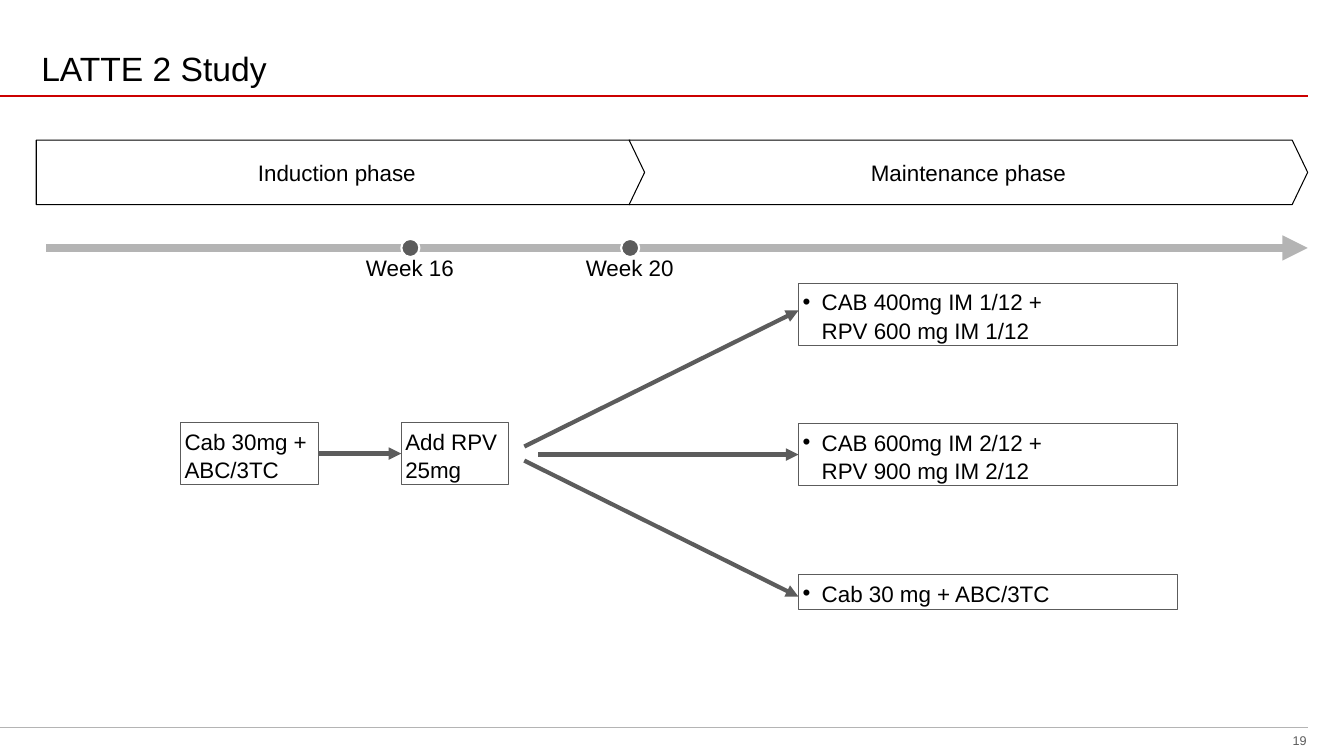
from lxml.etree import SubElement
from pptx import Presentation
from pptx.dml.color import RGBColor
from pptx.enum.shapes import MSO_CONNECTOR, MSO_SHAPE
from pptx.enum.text import MSO_ANCHOR, PP_ALIGN
from pptx.oxml.ns import qn
from pptx.util import Inches, Pt

BLACK, WHITE, RED = "000000", "FFFFFF", "CC0000"
DARK, LIGHT = "5C5C5C", "B4B4B4"


def paint(item, shade):
    item.solid()
    item.fore_color.rgb = RGBColor.from_string(shade)


def write(frame, words, size=16, shade=BLACK, align=PP_ALIGN.LEFT,
          anchor=MSO_ANCHOR.TOP, wrap=True, inset=0.04, base=0.04, bullet=False):
    frame.word_wrap = wrap
    frame.vertical_anchor = anchor
    frame.margin_left = frame.margin_right = frame.margin_top = Inches(inset)
    frame.margin_bottom = Inches(base)
    para = frame.paragraphs[0]
    para.text = words
    para.alignment = align
    para.line_spacing = 1.05
    for run in para.runs:
        run.font.name = "Arial"
        run.font.size = Pt(size)
        paint(run.font.fill, shade)
    for gap in para._p.findall(qn("a:br")):
        SubElement(gap, qn("a:rPr"), sz=str(size * 100))
    if bullet:
        props = para._p.get_or_add_pPr()
        props.set("marL", str(Inches(0.19)))
        props.set("indent", str(Inches(-0.19)))
        SubElement(props, qn("a:buFont"), typeface="Arial")
        SubElement(props, qn("a:buChar"), char="•")


class Board:
    def __init__(self, slide):
        self.slide = slide

    def text(self, left, top, width, height, words, **style):
        box = self.slide.shapes.add_textbox(
            Inches(left), Inches(top), Inches(width), Inches(height))
        write(box.text_frame, words, **style)

    def shape(self, kind, left, top, width, height, fill=None,
              edge=DARK, weight=0.75, bend=None, words="", **style):
        shape = self.slide.shapes.add_shape(
            kind, Inches(left), Inches(top), Inches(width), Inches(height))
        shape.shadow.inherit = False
        if bend is not None:
            shape.adjustments[0] = bend
        if fill:
            paint(shape.fill, fill)
        else:
            shape.fill.background()
        paint(shape.line.fill, edge)
        shape.line.width = Pt(weight)
        if words:
            write(shape.text_frame, words, **style)
        return shape

    def line(self, start, end, shade=DARK, weight=3, arrow=True,
             source=None, target=None):
        line = self.slide.shapes.add_connector(
            MSO_CONNECTOR.STRAIGHT, *map(Inches, start + end))
        paint(line.line.fill, shade)
        line.line.width = Pt(weight)
        if arrow:
            SubElement(line.line._get_or_add_ln(), qn("a:tailEnd"), type="triangle")
        SubElement(line._element.spPr, qn("a:effectLst"))
        if source:
            line.begin_connect(source, 3)
        if target:
            line.end_connect(target, 1)


def main():
    deck = Presentation()
    deck.slide_width, deck.slide_height = Inches(13.33), Inches(7.5)
    board = Board(deck.slides.add_slide(deck.slide_layouts[6]))

    board.text(12.81, 7.27, 0.15, 0.15, "19", size=9, shade=DARK, inset=0, base=0,
               align=PP_ALIGN.RIGHT, anchor=MSO_ANCHOR.MIDDLE, wrap=False)
    board.line((0, 7.22), (12.97, 7.22), LIGHT, 0.75, arrow=False)
    board.line((0, 0.95), (12.97, 0.95), RED, 1.5, arrow=False)
    board.text(0.37, 0, 12.6, 0.96, "LATTE 2 Study", size=24, base=0.08,
               anchor=MSO_ANCHOR.BOTTOM)

    arms = [board.shape(MSO_SHAPE.RECTANGLE, 7.92, top, 3.76, height,
                        words=words, bullet=True)
            for top, height, words in (
                (2.81, 0.62, "CAB 400mg IM 1/12 +\nRPV 600 mg IM 1/12"),
                (4.2, 0.62, "CAB 600mg IM 2/12 +\nRPV 900 mg IM 2/12"),
                (5.7, 0.35, "Cab 30 mg + ABC/3TC"))]
    first, second = [board.shape(MSO_SHAPE.RECTANGLE, left, 4.19, width, 0.62,
                                 words=words, wrap=False)
                     for left, width, words in (
                         (1.79, 1.37, "Cab 30mg +\nABC/3TC"),
                         (3.98, 1.06, "Add RPV\n25mg"))]
    board.line((3.16, 4.5), (3.98, 4.5), source=first, target=second)
    board.line((5.34, 4.51), (7.92, 4.51), target=arms[1])
    board.line((5.2, 4.43), (7.92, 3.08))
    board.line((5.2, 4.57), (7.92, 5.92))

    for kind, left, width, words in (
            (MSO_SHAPE.PENTAGON, 0.36, 6.04, "Induction phase"),
            (MSO_SHAPE.CHEVRON, 6.24, 6.73, "Maintenance phase")):
        board.shape(kind, left, 1.39, width, 0.64, fill=WHITE, edge=BLACK, bend=0.24,
                    words=words, align=PP_ALIGN.CENTER, anchor=MSO_ANCHOR.MIDDLE)

    board.line((0.46, 2.46), (12.97, 2.46), LIGHT, 6)
    for mid, words in ((4.07, "Week 16"), (6.25, "Week 20")):
        board.shape(MSO_SHAPE.OVAL, mid - 0.09, 2.37, 0.18, 0.18,
                    fill=DARK, edge=WHITE, weight=1.5)
        board.text(mid - 0.48, 2.47, 0.96, 0.35, words, wrap=False)

    deck.save("out.pptx")


if __name__ == "__main__":
    main()
